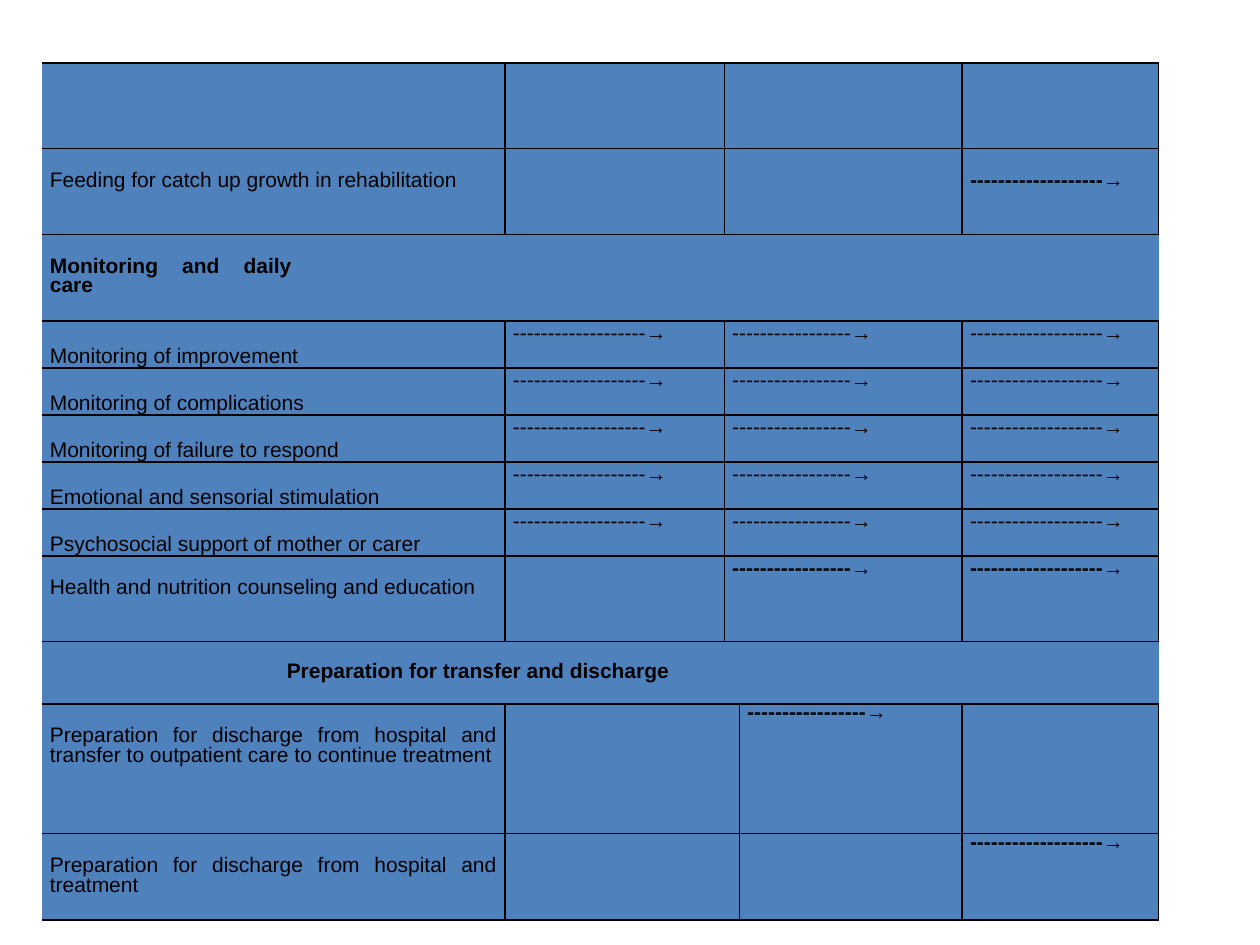
from dataclasses import dataclass

from lxml.etree import SubElement
from pptx import Presentation
from pptx.dml.color import RGBColor
from pptx.enum.text import MSO_ANCHOR, PP_ALIGN
from pptx.oxml.ns import qn
from pptx.table import Table, _Cell
from pptx.util import Pt

COLORS = {"fill": "4F81BD", "ink": "000000"}
FONT, SIZE = "Arial", 12
PLAIN_STYLE = "{2D5ABB26-0587-4C30-8999-92F81FD0307C}"
WIDTHS = [135.4, 8.6, 117.4, 125.3, 8.6, 127.4, 112.3]
SHORT, LONG = "-" * 17 + "→", "-" * 19 + "→"
TIGHT_DROP, LOOSE_DROP = 13.2, 13.4


@dataclass
class Box:
    """One cell: its text, how many columns it spans, and its format."""
    text: str = ""
    span: int = 1
    bold: bool = False
    tight: bool = False
    drop: float = 0
    middle: bool = False
    sides: str = "LRTB"


@dataclass
class Row:
    height: float
    boxes: list[Box]


def task(height: float, label: str, marks: tuple[str, str, str] = ("", "", ""),
         tight: bool = True, bold: bool = True, tight_marks: bool = True,
         mark_drop: float = 0, spans: tuple[int, int] = (1, 2)) -> Row:
    """A label over three columns, then one mark for each phase of care."""
    drop = TIGHT_DROP if tight else LOOSE_DROP
    head = Box(label, 3, tight=tight, drop=drop if label else 0, sides="RTB")
    phases = [Box(mark, span, bold, tight_marks, mark_drop, sides=sides)
              for mark, span, sides in zip(marks, (*spans, 1), ("LRTB", "LRTB", "LTB"))]
    return Row(height, [head, *phases])


def watch(label: str) -> Row:
    """A check that runs through all three phases."""
    return task(25.2, label, (LONG, SHORT, LONG), tight=False, bold=False,
                tight_marks=False)


ROWS = [
    task(49, ""),
    task(49, "Feeding for catch up growth in rehabilitation", ("", "", LONG),
         mark_drop=TIGHT_DROP),
    Row(49.5, [Box("Monitoring and daily care", 2, True, True, TIGHT_DROP, sides="TB"),
               *(Box(span=span, sides="TB") for span in (1, 1, 2, 1))]),
    watch("Monitoring of improvement"),
    watch("Monitoring of complications"),
    watch("Monitoring of failure to respond"),
    watch("Emotional and sensorial stimulation"),
    watch("Psychosocial support of mother or carer"),
    task(49, "Health and nutrition counseling and education", ("", SHORT, LONG),
         tight_marks=False),
    Row(35.5, [Box(sides="TB"),
               Box("Preparation for transfer and discharge", 6, True, True,
                   middle=True, sides="TB")]),
    task(74.2, "Preparation for discharge from hospital and transfer to "
         "outpatient care to continue treatment", ("", SHORT, ""), spans=(2, 1)),
    task(49.5, "Preparation for discharge from hospital and treatment",
         ("", "", LONG), spans=(2, 1)),
]


def write(cell: _Cell, text: str, *, bold: bool = False, tight: bool = False) -> None:
    para = cell.text_frame.paragraphs[0]
    para.alignment = PP_ALIGN.JUSTIFY
    if tight:
        para.line_spacing, para.space_before = Pt(11.4), Pt(1.8)
    run = para.add_run()
    run.text = text
    font = run.font
    font.name, font.size, font.bold = FONT, Pt(SIZE), bold
    font.color.rgb = RGBColor.from_string(COLORS["ink"])


def rule(cell: _Cell, sides: str) -> None:
    """Draw the cell's borders; they must precede its fill in the XML."""
    props = cell._tc.get_or_add_tcPr()
    for place, side in enumerate(sides):
        line = SubElement(props, qn(f"a:ln{side}"), w=str(Pt(1)))
        ink = SubElement(SubElement(line, qn("a:solidFill")), qn("a:srgbClr"))
        ink.set("val", COLORS["ink"])
        props.insert(place, line)


def paint(cell: _Cell) -> None:
    cell.margin_left = cell.margin_right = Pt(4.5)
    cell.margin_top = cell.margin_bottom = 0
    cell.fill.solid()
    cell.fill.fore_color.rgb = RGBColor.from_string(COLORS["fill"])


def draw(table: Table, at: int, row: Row) -> None:
    table.rows[at].height = Pt(row.height)
    col = 0
    for box in row.boxes:
        cell = table.cell(at, col)
        if box.span > 1:
            cell.merge(table.cell(at, col + box.span - 1))
        for part in range(col, col + box.span):
            paint(table.cell(at, part))
        rule(cell, box.sides)
        cell.margin_top = Pt(box.drop)
        if box.middle:
            cell.vertical_anchor = MSO_ANCHOR.MIDDLE
        if box.text:
            write(cell, box.text, bold=box.bold, tight=box.tight)
        col += box.span


def main() -> None:
    deck = Presentation()
    deck.slide_width, deck.slide_height = Pt(720), Pt(540)
    slide = deck.slides.add_slide(deck.slide_layouts[6])
    frame = slide.shapes.add_table(
        len(ROWS), len(WIDTHS), Pt(24), Pt(36), Pt(sum(WIDTHS)),
        Pt(sum(row.height for row in ROWS)))
    table = frame.table
    table.first_row = table.horz_banding = False
    table._tbl.tblPr.find(qn("a:tableStyleId")).text = PLAIN_STYLE
    for column, width in zip(table.columns, WIDTHS):
        column.width = Pt(width)
    for at, row in enumerate(ROWS):
        draw(table, at, row)
    deck.save("out.pptx")


if __name__ == "__main__":
    main()
